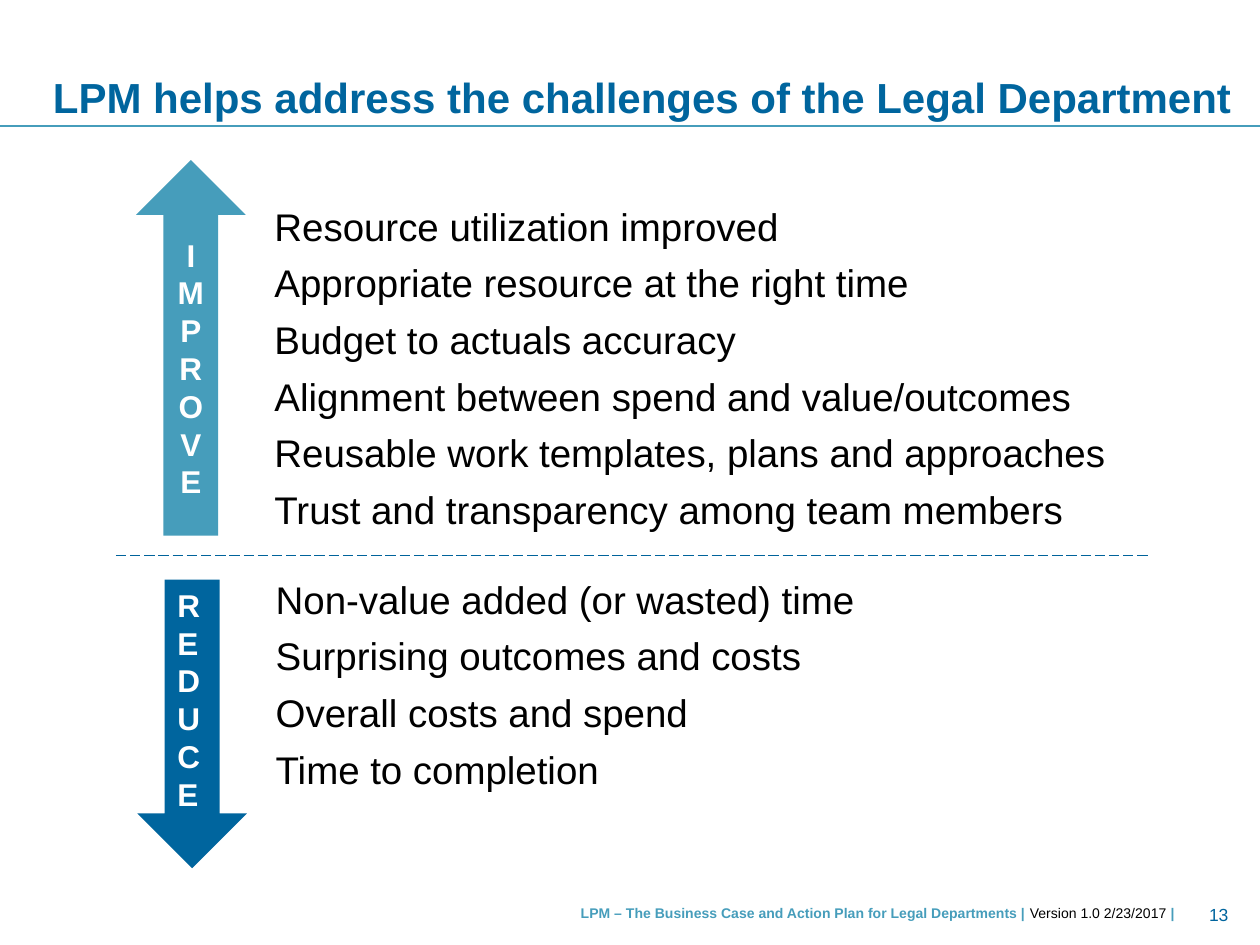
import pptx
import pptx.util
import pptx.dml.color
import pptx.enum.dml
import pptx.enum.shapes
import pptx.enum.text
import lxml.etree
from dataclasses import dataclass
from pptx.util import Inches

ALIGN = pptx.enum.text.PP_ALIGN
ANCHOR = pptx.enum.text.MSO_ANCHOR
SHAPE = pptx.enum.shapes.MSO_SHAPE


@dataclass(frozen=True)
class Theme:
    font: str = "Arial"
    dark_blue: str = "00659E"
    light_blue: str = "469DBB"
    divider: str = "00639B"
    black: str = "000000"
    white: str = "FFFFFF"
    title_size: int = 24
    item_size: int = 22
    letter_size: int = 18
    number_size: int = 10
    footer_size: int = 8


THEME = Theme()


def color(value):
    return pptx.dml.color.RGBColor.from_string(value)


def add_text(slide, box, paragraphs, size, align=ALIGN.LEFT, anchor=ANCHOR.TOP,
             inset=True, wrap=True, space_before=0, line_spacing=None):
    """Each paragraph is a list of (text, color, bold) runs."""
    shape = slide.shapes.add_textbox(*map(Inches, box))
    frame = shape.text_frame
    frame.word_wrap = wrap
    frame.vertical_anchor = anchor
    if not inset:
        frame.margin_left = frame.margin_right = 0
        frame.margin_top = frame.margin_bottom = 0
    for index, runs in enumerate(paragraphs):
        paragraph = frame.add_paragraph() if index else frame.paragraphs[0]
        paragraph.alignment = align
        if index and space_before:
            paragraph.space_before = pptx.util.Pt(space_before)
        if line_spacing:
            paragraph.line_spacing = line_spacing
        for text, run_color, bold in runs:
            run = paragraph.add_run()
            run.text = text
            run.font.name = THEME.font
            run.font.size = pptx.util.Pt(size)
            run.font.bold = bold
            run.font.color.rgb = color(run_color)


def add_rule(slide, left, right, y, line_color, dash=None):
    line = slide.shapes.add_connector(
        pptx.enum.shapes.MSO_CONNECTOR.STRAIGHT,
        Inches(left), Inches(y), Inches(right), Inches(y))
    line.line.color.rgb = color(line_color)
    line.line.width = pptx.util.Pt(0.75)
    if dash:
        line.line.dash_style = dash
    lxml.etree.SubElement(line._element.spPr, pptx.oxml.ns.qn("a:effectLst"))


def add_title(slide, box, text):
    add_text(slide, box, [[(text, THEME.dark_blue, True)]], THEME.title_size,
             anchor=ANCHOR.BOTTOM, inset=False, line_spacing=0.9)
    add_rule(slide, 0, 10, 1, THEME.light_blue)


def add_arrow(slide, box, kind, fill, word, word_box, align):
    arrow = slide.shapes.add_shape(kind, *map(Inches, box))
    arrow.shadow.inherit = False
    arrow.fill.solid()
    arrow.fill.fore_color.rgb = color(fill)
    arrow.line.fill.background()
    # One letter per line down the shaft
    add_text(slide, word_box, [[(letter, THEME.white, True)] for letter in word],
             THEME.letter_size, align=align)


def add_items(slide, box, items):
    add_text(slide, box, [[(item, THEME.black, False)] for item in items],
             THEME.item_size, space_before=6)


def add_footer(slide, box, number_box):
    runs = [
        ("LPM – The Business Case and Action Plan for Legal Departments |",
         THEME.light_blue, True),
        (" Version 1.0 2/23/2017 ", THEME.black, False),
        ("|", THEME.light_blue, True),
    ]
    add_text(slide, box, [runs], THEME.footer_size, align=ALIGN.RIGHT)
    add_text(slide, number_box, [[("13", THEME.dark_blue, False)]],
             THEME.number_size, align=ALIGN.RIGHT, anchor=ANCHOR.MIDDLE,
             inset=False, wrap=False)


def main():
    presentation = pptx.Presentation()
    presentation.slide_width = Inches(10)
    presentation.slide_height = Inches(7.5)
    slide = presentation.slides.add_slide(presentation.slide_layouts[6])

    add_title(slide, (0.42, 0.06, 9.58, 0.91),
              "LPM helps address the challenges of the Legal Department")

    # What improves
    add_arrow(slide, (1.08, 1.27, 0.87, 2.98), SHAPE.UP_ARROW, THEME.light_blue,
              "IMPROVE", (1.31, 1.82, 0.41, 2.22), ALIGN.CENTER)
    add_items(slide, (2.08, 1.56, 7.42, 2.74), [
        "Resource utilization improved",
        "Appropriate resource at the right time",
        "Budget to actuals accuracy",
        "Alignment between spend and value/outcomes",
        "Reusable work templates, plans and approaches",
        "Trust and transparency among team members",
    ])

    add_rule(slide, 0.92, 9.12, 4.41, THEME.divider,
             pptx.enum.dml.MSO_LINE.LONG_DASH)

    # What is reduced
    add_arrow(slide, (1.09, 4.6, 0.87, 2.29), SHAPE.DOWN_ARROW, THEME.dark_blue,
              "REDUCE", (1.31, 4.6, 0.41, 1.92), ALIGN.LEFT)
    add_items(slide, (2.09, 4.52, 6, 1.83), [
        "Non-value added (or wasted) time",
        "Surprising outcomes and costs",
        "Overall costs and spend",
        "Time to completion",
    ])

    add_footer(slide, (3.92, 7.13, 5.5, 0.24), (9.58, 7.17, 0.17, 0.17))
    presentation.save("out.pptx")


if __name__ == "__main__":
    main()
